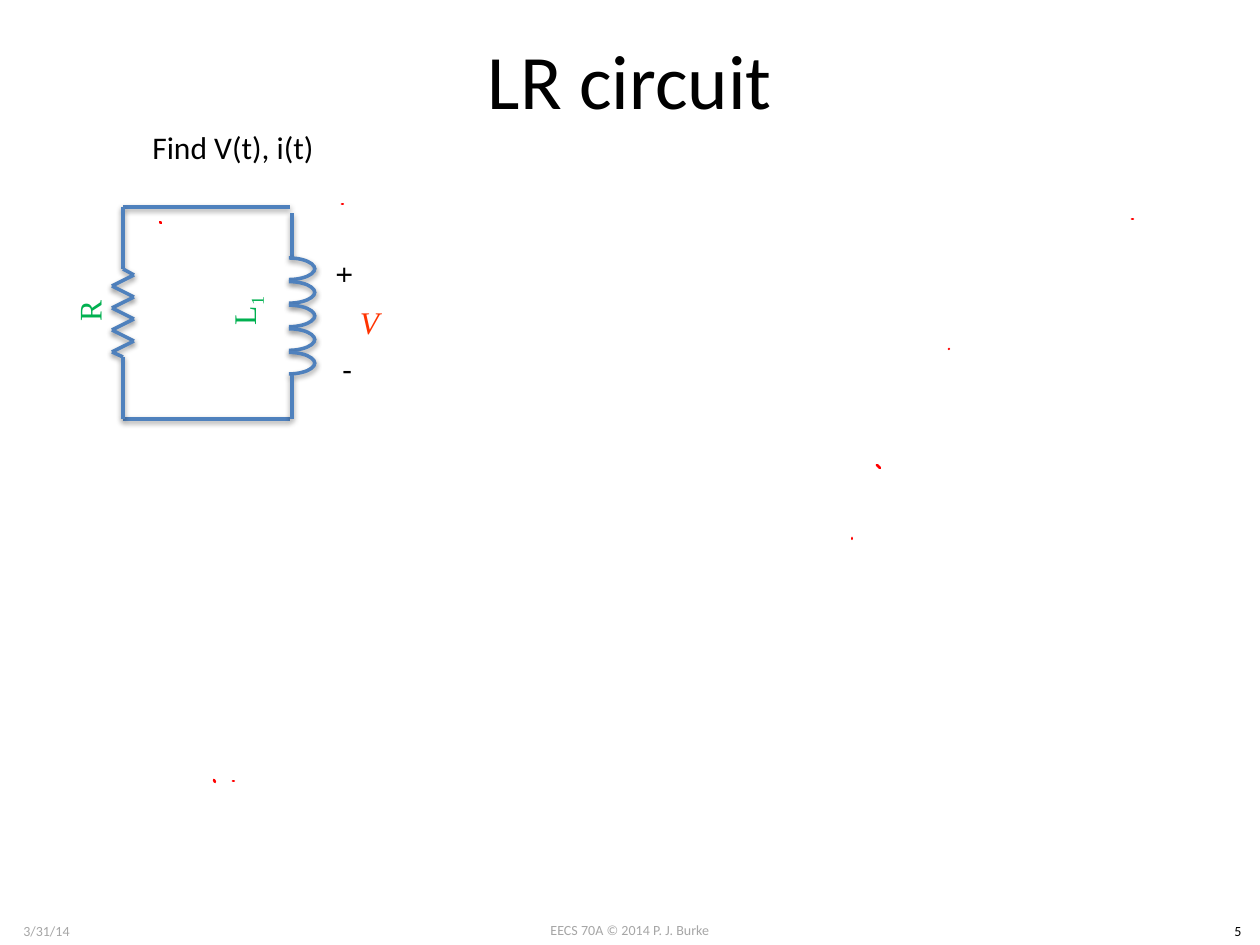
from itertools import pairwise

from lxml import etree
from pptx import Presentation
from pptx.dml.color import RGBColor
from pptx.enum.shapes import MSO_CONNECTOR, MSO_SHAPE
from pptx.enum.text import MSO_ANCHOR, PP_ALIGN
from pptx.oxml.ns import qn
from pptx.util import Pt

EMU_PER_PX = 914400 / 126
BLACK = RGBColor(0x00, 0x00, 0x00)
GRAY = RGBColor(0xA6, 0xA6, 0xA6)
BLUE = RGBColor(0x4F, 0x81, 0xBD)
GREEN = RGBColor(0x00, 0xB0, 0x50)
ORANGE = RGBColor(0xFF, 0x33, 0x00)
RED = RGBColor(0xFF, 0x00, 0x00)
SANS, SERIF = "Calibri", "Times New Roman"
LEFT, CENTER = PP_ALIGN.LEFT, PP_ALIGN.CENTER
TOP, MIDDLE = MSO_ANCHOR.TOP, MSO_ANCHOR.MIDDLE
STRAIGHT, ARC = MSO_CONNECTOR.STRAIGHT, MSO_SHAPE.ARC

INK_STROKES = (
    (((880, 468), (877, 465)), ((233, 781), (234, 781)), ((161, 223), (160, 222))),
    (((949, 349), (949, 349)), ((852, 538), (852, 539)), ((215, 782), (214, 780)),
     ((342, 204), (343, 204)), ((1132, 219), (1133, 219))),
)


def px(*lengths):
    return [round(length * EMU_PER_PX) for length in lengths]


def add_text(slide, box, text, size=18, font=SANS, color=BLACK, align=LEFT,
             anchor=TOP, wrap=True, rotation=0, italic=False, subscript=""):
    shape = slide.shapes.add_textbox(*px(*box))
    shape.rotation = rotation
    frame = shape.text_frame
    frame.word_wrap = wrap
    frame.vertical_anchor = anchor
    paragraph = frame.paragraphs[0]
    paragraph.alignment = align
    for part in filter(None, (text, subscript)):
        run = paragraph.add_run()
        run.text = part
        run.font.size = Pt(size)
        run.font.name = font
        run.font.italic = italic
        run.font.color.rgb = color
        if part == subscript:
            run.font._element.set("baseline", "-25000")


def style_wire(shape):
    """Blue line with a soft shadow falling straight down."""
    shape.line.color.rgb = BLUE
    shape.line.width = Pt(2)
    properties = shape._element.spPr
    for old in properties.findall(qn("a:effectLst")):
        properties.remove(old)
    effects = etree.SubElement(properties, qn("a:effectLst"))
    shadow = etree.SubElement(effects, qn("a:outerShdw"), blurRad="40000",
                              dist="20000", dir="5400000", rotWithShape="0")
    color = etree.SubElement(shadow, qn("a:srgbClr"), val="000000")
    etree.SubElement(color, qn("a:alpha"), val="38000")


def add_wire(slide, start, end):
    style_wire(slide.shapes.add_connector(STRAIGHT, *px(*start, *end)))


def add_resistor(slide, left, top, width, height):
    """Vertical leads joined by a zigzag of eight corners."""
    middle = left + width / 2
    zigzag_top, zigzag_bottom = top + 62, top + height - 62
    corners = [(left if i % 2 else left + width, zigzag_top + 6 + 11 * i)
               for i in range(8)]
    points = [(middle, top), (middle, zigzag_top), *corners,
              (middle, zigzag_bottom), (middle, top + height)]
    for start, end in pairwise(points):
        add_wire(slide, start, end)


def add_inductor(slide, left, top, width, height):
    """Vertical leads joined by five half-turn coils."""
    middle = left + width / 2 + 3
    lead, coils = 44, 5
    step = (height - 2 * lead) / coils
    add_wire(slide, (middle, top + lead), (middle, top))
    for i in range(coils):
        arc_top = top + lead + 1 + step * i
        for flipped in (False, True):
            arc = slide.shapes.add_shape(
                ARC, *px(left, arc_top - flipped, width, step - 1))
            arc.fill.background()
            style_wire(arc)
            if flipped:
                arc._element.spPr.find(qn("a:xfrm")).set("flipV", "1")
    add_wire(slide, (middle, top + height), (middle, top + height - lead))


def add_circuit(slide, left, top, width, height):
    right, bottom = left + width, top + height
    for y in (top, bottom):
        add_wire(slide, (left, y), (right, y))
    add_resistor(slide, left - 11, top, 22, height)
    add_inductor(slide, right - 27, top + 6, 52, height - 6)
    label = dict(font=SERIF, align=CENTER, anchor=MIDDLE)
    add_text(slide, (left - 109, top + 58, 150, 92), "R",
             color=GREEN, rotation=270, **label)
    add_text(slide, (left + 48, top + 58, 150, 92), "L",
             color=GREEN, rotation=270, subscript="1", **label)
    add_text(slide, (right + 31, top + 76, 97, 77), "V",
             color=ORANGE, italic=True, **label)
    add_text(slide, (right + 36, top + 44, 42, 50), "+", wrap=False, rotation=90)
    add_text(slide, (right + 40, top + 137, 35, 50), "-", wrap=False)


def add_ink(slide, strokes):
    builder = slide.shapes.build_freeform(*strokes[0][0], scale=EMU_PER_PX)
    for start, end in strokes:
        builder.move_to(*start)
        builder.add_line_segments([end], close=False)
    ink = builder.convert_to_shape()
    ink.shadow.inherit = False
    ink.fill.background()
    ink.line.color.rgb = RED
    ink.line.width = Pt(1.5)
    ink.line._get_or_add_ln().set("cap", "rnd")


def add_footer(slide, left, top, width, height):
    small = dict(size=8, align=CENTER)
    add_text(slide, (left + 483, top, 294, height), "EECS 70A © 2014 P. J. Burke",
             color=GRAY, **small)
    add_text(slide, (left, top + 1, 93, height), "3/31/14", color=GRAY, **small)
    add_text(slide, (left + width - 44, top + 1, 44, height), "5", **small)


def main():
    presentation = Presentation()
    presentation.slide_width, presentation.slide_height = px(1260, 945)
    slide = presentation.slides.add_slide(presentation.slide_layouts[6])
    add_footer(slide, 0, 915, 1260, 30)
    add_text(slide, (63, 0, 1134, 158), "LR circuit", size=44,
             align=CENTER, anchor=MIDDLE)
    add_text(slide, (140, 122, 189, 50), "Find V(t), i(t)", wrap=False)
    add_circuit(slide, 123, 207, 167, 212)
    for strokes in INK_STROKES:
        add_ink(slide, strokes)
    presentation.save("out.pptx")


if __name__ == "__main__":
    main()
